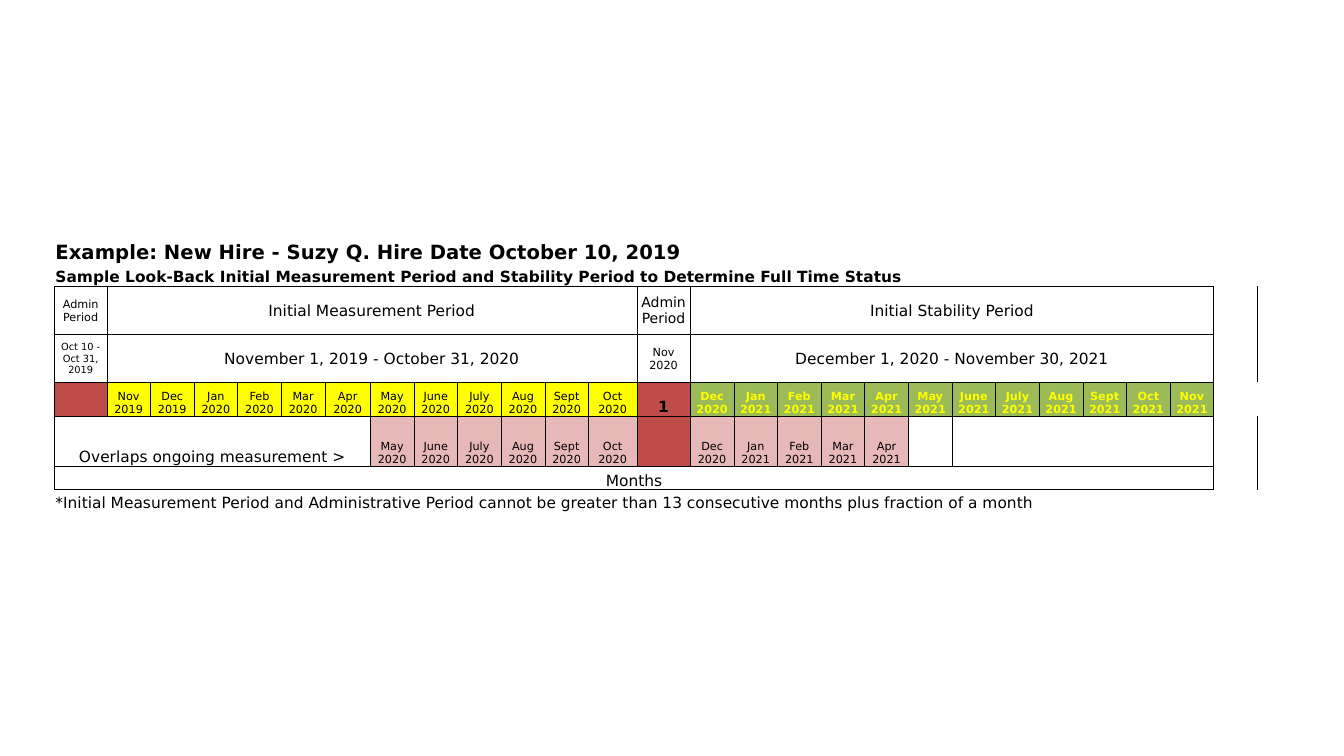
from lxml import etree
from pptx import Presentation
from pptx.dml.color import RGBColor
from pptx.enum.text import MSO_ANCHOR, PP_ALIGN
from pptx.oxml.ns import qn
from pptx.util import Inches, Pt

LEFT, CENTER = PP_ALIGN.LEFT, PP_ALIGN.CENTER
MIDDLE, BOTTOM = MSO_ANCHOR.MIDDLE, MSO_ANCHOR.BOTTOM
BLACK = RGBColor(0x00, 0x00, 0x00)
YELLOW = RGBColor(0xFF, 0xFF, 0x00)
RED = RGBColor(0xBE, 0x4D, 0x4A)
GREEN = RGBColor(0x9B, 0xBB, 0x59)
PINK = RGBColor(0xE6, 0xB8, 0xB7)
FONT = "DejaVu Sans"
NO_STYLE = "{2D5ABB26-0587-4C30-8999-92F81FD0307C}"
SIDES = ("L", "R", "T", "B")
MONTHS = ("Jan", "Feb", "Mar", "Apr", "May", "June",
          "July", "Aug", "Sept", "Oct", "Nov", "Dec")
ROW_HEIGHTS = (0.28, 0.22, 0.48, 0.47, 0.34, 0.5, 0.23, 0.22)
SPECIAL_WIDTHS = {0: 0.52, 6: 0.45, 12: 0.48, 13: 0.53}
COLUMN_COUNT = 27


def month_labels(first_month, year, count):
    """Return consecutive month labels such as 'Nov 2019'."""
    start = year * 12 + MONTHS.index(first_month)
    return [f"{MONTHS[n % 12]} {n // 12}" for n in range(start, start + count)]


def put(table, row, col, span=1, text="", size=8, bold=False, color=BLACK,
        align=CENTER, anchor=BOTTOM, fill=None):
    """Fill one cell, merged across span columns."""
    cell = table.cell(row, col)
    if span > 1:
        cell.merge(table.cell(row, col + span - 1))
    cell.vertical_anchor = anchor
    if fill is not None:
        cell.fill.solid()
        cell.fill.fore_color.rgb = fill
    if text:
        cell.text = text
        paragraph = cell.text_frame.paragraphs[0]
        paragraph.alignment = align
        paragraph.font.name = FONT
        paragraph.font.size = Pt(size)
        paragraph.font.bold = bold
        paragraph.font.color.rgb = color


def box_edges(row, col, span):
    """Return the edges around a one-row box, seen from both sides."""
    last = col + span - 1
    edges = {(row, col, "L"), (row, col, "R"), (row, last, "R"),
             (row, col - 1, "R"), (row, last + 1, "L")}
    for c in range(col, last + 1):
        edges |= {(row, c, "T"), (row, c, "B"),
                  (row - 1, c, "B"), (row + 1, c, "T")}
    return edges


def draw_borders(table, edges):
    """Write thin black lines on the given cell edges."""
    for r in range(len(ROW_HEIGHTS)):
        for c in range(COLUMN_COUNT):
            properties = table.cell(r, c)._tc.get_or_add_tcPr()
            sides = [side for side in SIDES if (r, c, side) in edges]
            for index, side in enumerate(sides):
                line = etree.Element(qn(f"a:ln{side}"), w=str(Pt(0.5)))
                solid = etree.SubElement(line, qn("a:solidFill"))
                etree.SubElement(solid, qn("a:srgbClr"), val=str(BLACK))
                properties.insert(index, line)


def add_grid(slide, left, top, width):
    """Add the plain table with its column widths and row heights."""
    frame = slide.shapes.add_table(
        len(ROW_HEIGHTS), COLUMN_COUNT, Inches(left), Inches(top),
        Inches(width), Inches(sum(ROW_HEIGHTS)))
    table = frame.table
    table.first_row = False
    table.horz_banding = False
    table._tbl.tblPr.find(qn("a:tableStyleId")).text = NO_STYLE
    month_width = ((width - sum(SPECIAL_WIDTHS.values()))
                   / (COLUMN_COUNT - len(SPECIAL_WIDTHS)))
    for index, column in enumerate(table.columns):
        column.width = Inches(SPECIAL_WIDTHS.get(index, month_width))
    for row, height in zip(table.rows, ROW_HEIGHTS):
        row.height = Inches(height)
    for cell in table.iter_cells():
        cell.margin_left = cell.margin_right = cell.margin_top = Inches(0.01)
        cell.margin_bottom = 0
        cell.fill.background()
        paragraph = cell.text_frame.paragraphs[0]
        etree.SubElement(paragraph._p, qn("a:endParaRPr"), sz="800")
    return table


def add_timeline(slide, left, top, width):
    """Add the measurement and stability timeline table."""
    table = add_grid(slide, left, top, width)
    put(table, 0, 0, 16, "Example: New Hire - Suzy Q. Hire Date October 10, 2019",
        14, bold=True, align=LEFT)
    put(table, 1, 0, 20, "Sample Look-Back Initial Measurement Period and Stability "
        "Period to Determine Full Time Status", 11, bold=True, align=LEFT)
    put(table, 7, 0, 24, "*Initial Measurement Period and Administrative Period cannot "
        "be greater than 13 consecutive months plus fraction of a month", 11, align=LEFT)

    edges = set()

    def boxed(row, col, span=1, text="", size=8, **style):
        """Fill a cell and record its outline."""
        put(table, row, col, span, text, size, **style)
        edges.update(box_edges(row, col, span))

    periods = (
        (2, (("Admin Period", 8), ("Initial Measurement Period", 11),
             ("Admin Period", 10), ("Initial Stability Period", 11))),
        (3, (("Oct 10 - Oct 31, 2019", 7), ("November 1, 2019 - October 31, 2020", 11),
             ("Nov 2020", 8), ("December 1, 2020 - November 30, 2021", 11))),
    )
    for row, labels in periods:
        for (text, size), (col, span) in zip(labels, ((0, 1), (1, 12), (13, 1), (14, 12))):
            boxed(row, col, span, text, size, anchor=MIDDLE)

    month_runs = (
        (4, 1, month_labels("Nov", 2019, 12), {"fill": YELLOW}),
        (4, 14, month_labels("Dec", 2020, 12),
         {"fill": GREEN, "color": YELLOW, "bold": True}),
        (5, 7, month_labels("May", 2020, 6), {"fill": PINK}),
        (5, 14, month_labels("Dec", 2020, 5), {"fill": PINK}),
    )
    for row, first, labels, style in month_runs:
        for col, label in enumerate(labels, first):
            boxed(row, col, text=label, **style)

    boxed(4, 0, fill=RED)
    boxed(4, 13, text="1", size=11, bold=True, fill=RED)
    boxed(5, 0, 7, "Overlaps ongoing measurement >", 11)
    boxed(5, 13, fill=RED)
    boxed(5, 19)
    edges |= box_edges(5, 20, 6) - {(5, 20, "R")}
    boxed(6, 0, 26, "Months", 11)
    draw_borders(table, edges)


def main():
    """Build and save the slide."""
    deck = Presentation()
    deck.slide_width, deck.slide_height = Inches(13.33), Inches(7.5)
    slide = deck.slides.add_slide(deck.slide_layouts[6])
    add_timeline(slide, 0.54, 2.34, 11.94)
    deck.save("out.pptx")


if __name__ == "__main__":
    main()
